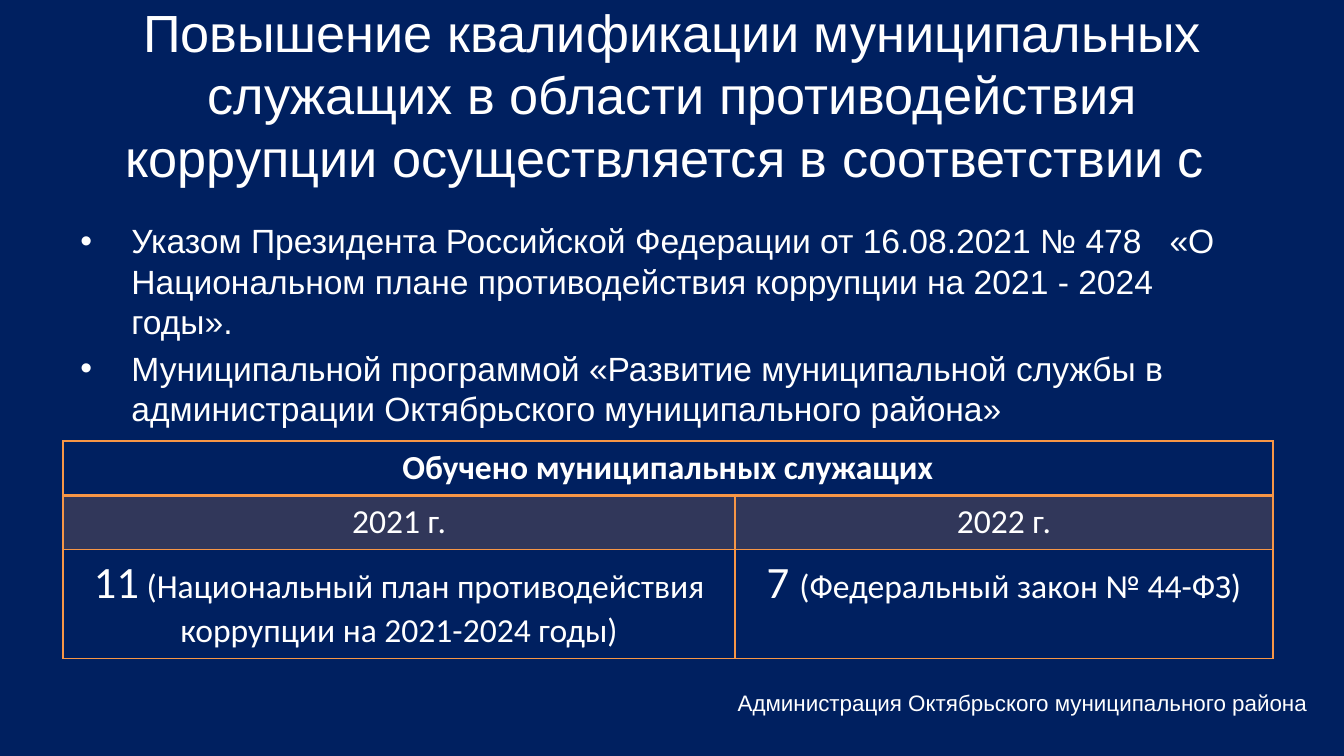
import pptx
import pptx.dml.color
import pptx.enum.text
import pptx.oxml
import pptx.oxml.ns
import pptx.util
from lxml import etree

NAVY = pptx.dml.color.RGBColor(0x00, 0x20, 0x60)
WHITE = pptx.dml.color.RGBColor(0xFF, 0xFF, 0xFF)
ORANGE = pptx.dml.color.RGBColor(0xF7, 0x96, 0x46)

WIDTH = 10
HEIGHT = WIDTH * 9 / 16
MARGIN = 0.05 * WIDTH
CONTENT_WIDTH = WIDTH - 2 * MARGIN

TITLE = ("Повышение квалификации муниципальных служащих в области "
         "противодействия коррупции осуществляется в соответствии с ")
DOCUMENTS = [
    "Указом Президента Российской Федерации от 16.08.2021 № 478   «О "
    "Национальном плане противодействия коррупции на 2021 - 2024 годы».",
    "Муниципальной программой «Развитие муниципальной службы в "
    "администрации Октябрьского муниципального района»",
]
# Each cell is a list of runs: text and size
TRAINING = [
    [[("Обучено муниципальных служащих", 18)], []],
    [[("2021 г.", 18)], [("2022 г.", 18)]],
    [[("11", 24), (" (Национальный план противодействия коррупции на 2021-2024 годы)", 18)],
     [("7 ", 24), ("(Федеральный закон № 44-ФЗ)", 18)]],
]
FOOTER = "Администрация Октябрьского муниципального района"


def inches(box):
    return [pptx.util.Inches(length) for length in box]


def format_run(run, size, name="Arial", bold=False):
    run.font.size = pptx.util.Pt(size)
    run.font.name = name
    run.font.bold = bold
    run.font.color.rgb = WHITE


def add_text(slide, box, lines, size):
    """Place a text box with one paragraph for each line."""
    text_frame = slide.shapes.add_textbox(*inches(box)).text_frame
    text_frame.word_wrap = True
    text_frame.text = "\n".join(lines)
    for paragraph in text_frame.paragraphs:
        format_run(paragraph.runs[0], size)
    return text_frame


def add_title(slide, box):
    text_frame = add_text(slide, box, [TITLE], 28)
    text_frame.vertical_anchor = pptx.enum.text.MSO_ANCHOR.MIDDLE
    text_frame.paragraphs[0].alignment = pptx.enum.text.PP_ALIGN.CENTER


def add_documents(slide, box):
    size = 18
    indent = pptx.util.Inches(0.38)
    for paragraph in add_text(slide, box, DOCUMENTS, size).paragraphs:
        paragraph.space_before = pptx.util.Pt(0.2 * size)
        properties = paragraph._p.get_or_add_pPr()
        properties.set("marL", str(indent))
        properties.set("indent", str(-indent))
        for tag, attribute, value in (("a:buFont", "typeface", "Arial"),
                                      ("a:buChar", "char", "•")):
            bullet = etree.SubElement(properties, pptx.oxml.ns.qn(tag))
            bullet.set(attribute, value)


def set_borders(cell, widths):
    """Draw the left, right, top and bottom borders, widths in points."""
    properties = cell._tc.get_or_add_tcPr()
    for position, (side, width) in enumerate(zip("LRTB", widths)):
        properties.insert(position, pptx.oxml.parse_xml(
            f'<a:ln{side} {pptx.oxml.ns.nsdecls("a")} w="{pptx.util.Pt(width)}">'
            f'<a:solidFill><a:srgbClr val="{ORANGE}"/></a:solidFill></a:ln{side}>'))


def fill_cell(cell, tinted):
    if not tinted:
        cell.fill.background()
        return
    cell.fill.solid()
    cell.fill.fore_color.rgb = ORANGE
    color = cell._tc.tcPr.find(".//" + pptx.oxml.ns.qn("a:srgbClr"))
    etree.SubElement(color, pptx.oxml.ns.qn("a:alpha")).set("val", "20000")


def add_training_table(slide, box):
    table = slide.shapes.add_table(len(TRAINING), 2, *inches(box)).table
    left, top, width, height = box
    for column, share in zip(table.columns, (5, 4)):
        column.width = pptx.util.Inches(width * share / 9)
    for row, share in zip(table.rows, (1, 1, 2)):
        row.height = pptx.util.Inches(height * share / 4)

    for row_index, row in enumerate(TRAINING):
        header = row_index == 0
        for column_index, parts in enumerate(row):
            cell = table.cell(row_index, column_index)
            paragraph = cell.text_frame.paragraphs[0]
            paragraph.alignment = pptx.enum.text.PP_ALIGN.CENTER
            for text, size in parts:
                run = paragraph.add_run()
                run.text = text
                format_run(run, size, "Calibri", header)
            fill_cell(cell, row_index == 1)
            set_borders(cell, (1, 1, 1, 2 if header else 1))
    table.cell(0, 0).merge(table.cell(0, 1))


def add_footer(slide, box):
    add_text(slide, box, [FOOTER], 12)


def main():
    presentation = pptx.Presentation()
    presentation.slide_width, presentation.slide_height = inches((WIDTH, HEIGHT))
    slide = presentation.slides.add_slide(presentation.slide_layouts[6])
    slide.background.fill.solid()
    slide.background.fill.fore_color.rgb = NAVY

    add_title(slide, (MARGIN, 0.23, CONTENT_WIDTH, 0.94))
    add_documents(slide, (MARGIN, 1.59, CONTENT_WIDTH, 2.48))
    add_training_table(slide, (0.47, 3.28, CONTENT_WIDTH, 1.62))
    add_footer(slide, (5.39, 5.08, 4.45, 0.3))
    presentation.save("out.pptx")


if __name__ == "__main__":
    main()
